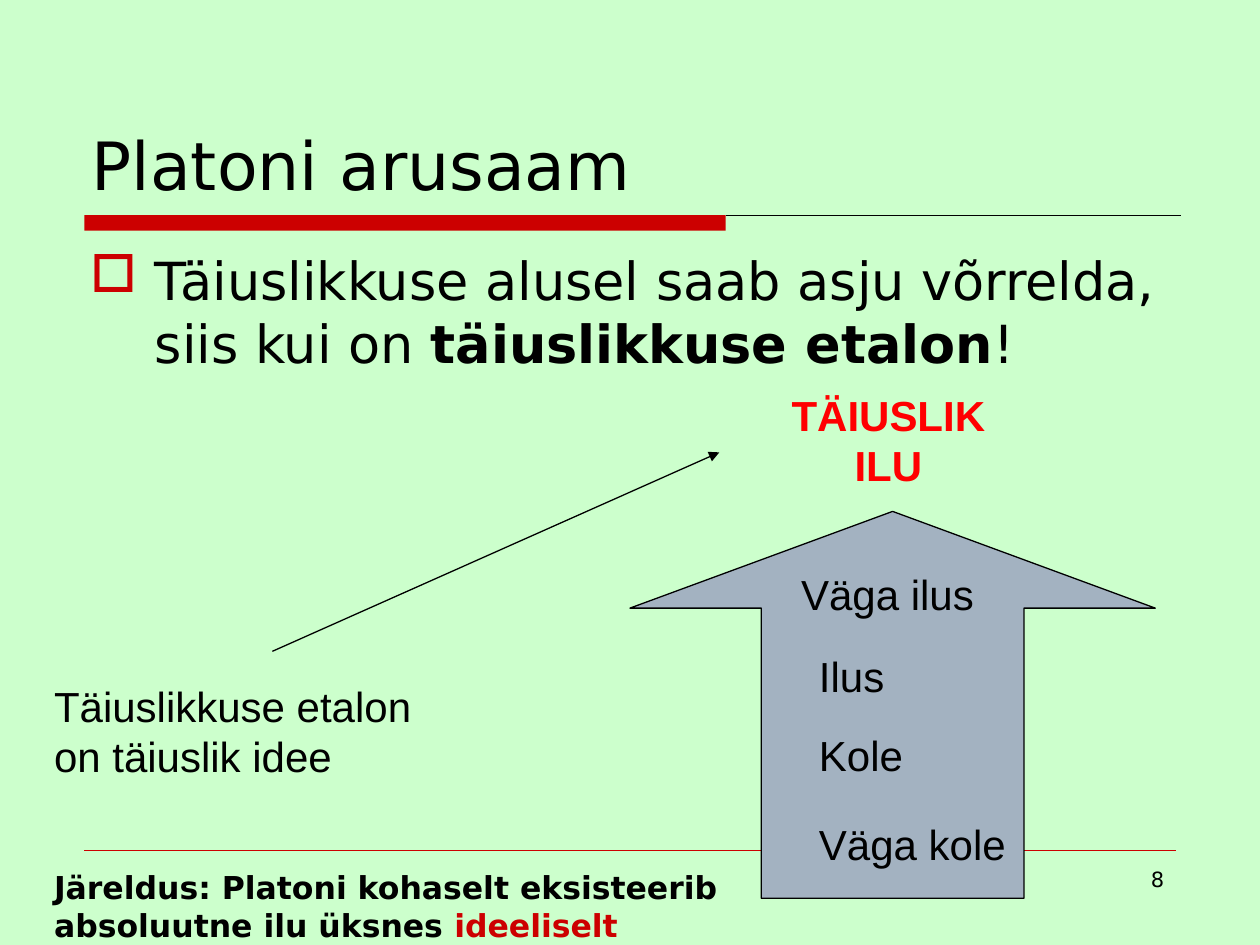
import pptx
import pptx.dml.color
import pptx.enum.shapes
import pptx.enum.text
import pptx.oxml
import pptx.oxml.ns
import pptx.util
from pptx.util import Cm, Pt

BLACK, RED, BRIGHT_RED = "000000", "CC0000", "FF0000"
BACKGROUND, ARROW_FILL = "CCFFCC", "A3B2C1"
SANS, ARIAL = "DejaVu Sans", "Arial"
ALIGN = pptx.enum.text.PP_ALIGN
ANCHOR = pptx.enum.text.MSO_ANCHOR
SHAPE = pptx.enum.shapes.MSO_SHAPE

# Each paragraph is a list of runs: (text, overrides)
TITLE = [[("Platoni arusaam", {})]]
BODY = [[
    ("Täiuslikkuse alusel saab asju võrrelda, siis kui on ", {}),
    ("täiuslikkuse etalon", {"bold": True}),
    ("!", {}),
]]
IDEAL = [[("TÄIUSLIK", {})], [("ILU", {})]]
STANDARD = [[("Täiuslikkuse etalon", {})], [("on täiuslik idee", {})]]
CONCLUSION = [
    [("Järeldus: Platoni kohaselt eksisteerib", {})],
    [("absoluutne ilu üksnes ", {}), ("ideeliselt", {"color": RED})],
]
PAGE_NUMBER = [[("8", {})]]

# Steps of beauty inside the arrow: text, left, top, width
STEPS = [
    ("Väga ilus", 15.9, 11.33, 3.99),
    ("Ilus", 16.26, 12.98, 1.83),
    ("Kole", 16.26, 14.58, 2.21),
    ("Väga kole", 16.26, 16.38, 4.29),
]


def rgb(color):
    return pptx.dml.color.RGBColor.from_string(color)


def add_xml(parent, xml):
    """Append an element of the drawing namespace to parent."""
    namespace = pptx.oxml.ns.nsdecls("a")
    parent.append(pptx.oxml.parse_xml(xml.replace("/>", f" {namespace}/>", 1)))


def add_text(slide, box, paragraphs, size, font=ARIAL, color=BLACK, bold=False,
             align=ALIGN.LEFT, anchor=ANCHOR.TOP, wrap=False):
    shape = slide.shapes.add_textbox(*map(Cm, box))
    frame = shape.text_frame
    frame.word_wrap = wrap
    frame.vertical_anchor = anchor
    for index, runs in enumerate(paragraphs):
        paragraph = frame.paragraphs[0] if index == 0 else frame.add_paragraph()
        paragraph.alignment = align
        paragraph.font.name = font
        paragraph.font.size = Pt(size)
        paragraph.font.bold = bold
        paragraph.font.color.rgb = rgb(color)
        for text, overrides in runs:
            run = paragraph.add_run()
            run.text = text
            if "bold" in overrides:
                run.font.bold = overrides["bold"]
            if "color" in overrides:
                run.font.color.rgb = rgb(overrides["color"])
    return shape


def add_line(slide, start, end, color, width):
    line = slide.shapes.add_connector(
        pptx.enum.shapes.MSO_CONNECTOR.STRAIGHT, *map(Cm, start + end))
    line.line.color.rgb = rgb(color)
    line.line.width = Pt(width)
    add_xml(line.element.spPr, "<a:effectLst/>")
    return line


def add_filled_shape(slide, kind, box, fill):
    shape = slide.shapes.add_shape(kind, *map(Cm, box))
    shape.shadow.inherit = False
    shape.fill.solid()
    shape.fill.fore_color.rgb = rgb(fill)
    return shape


def add_square_bullet(paragraph, indent):
    properties = paragraph._p.get_or_add_pPr()
    properties.set("marL", str(Cm(indent)))
    properties.set("indent", str(-Cm(indent)))
    paragraph.space_before = Pt(6)
    properties.append(pptx.oxml.parse_xml(
        f'<a:buClr {pptx.oxml.ns.nsdecls("a")}><a:srgbClr val="{RED}"/></a:buClr>'))
    add_xml(properties, '<a:buChar char="□"/>')
    # Bullet elements must come before the default run properties
    defaults = properties.find(pptx.oxml.ns.qn("a:defRPr"))
    if defaults is not None:
        properties.append(defaults)


def main():
    presentation = pptx.Presentation()
    presentation.slide_width, presentation.slide_height = Cm(25.4), Cm(19.05)
    slide = presentation.slides.add_slide(presentation.slide_layouts[6])
    slide.background.fill.solid()
    slide.background.fill.fore_color.rgb = rgb(BACKGROUND)

    title_bar = add_filled_shape(slide, SHAPE.RECTANGLE, (1.7, 4.34, 12.93, 0.31), RED)
    title_bar.line.fill.background()
    add_line(slide, (14.63, 4.34), (23.8, 4.34), BLACK, 0.75)
    add_line(slide, (1.7, 17.15), (23.7, 17.15), RED, 0.25)
    add_text(slide, (18.21, 17.35, 5.51, 1.32), PAGE_NUMBER, 12, SANS,
             align=ALIGN.RIGHT, wrap=True)

    add_text(slide, (1.6, 0.84, 22.23, 3.39), TITLE, 38, SANS,
             anchor=ANCHOR.BOTTOM, wrap=True)
    body = add_text(slide, (1.57, 4.88, 22.23, 11.86), BODY, 30, SANS, wrap=True)
    add_square_bullet(body.text_frame.paragraphs[0], 1.3)

    arrow = add_filled_shape(slide, SHAPE.UP_ARROW, (12.7, 10.31, 10.59, 7.8), ARROW_FILL)
    arrow.adjustments[0], arrow.adjustments[1] = 0.5, 0.25
    arrow.line.color.rgb = rgb(BLACK)
    arrow.line.width = Pt(0.75)

    add_text(slide, (15.7, 7.72, 4.42, 2.29), IDEAL, 24, color=BRIGHT_RED,
             bold=True, align=ALIGN.CENTER)
    for text, left, top, width in STEPS:
        add_text(slide, (left, top, width, 1.27), [[(text, {})]], 24)

    add_text(slide, (0.84, 13.59, 7.72, 2.29), STANDARD, 24)
    pointer = add_line(slide, (5.49, 13.13), (14.5, 9.12), BLACK, 0.75)
    add_xml(pointer.line._get_or_add_ln(), '<a:tailEnd type="triangle"/>')
    add_text(slide, (0.84, 17.37, 13.92, 1.78), CONCLUSION, 18, SANS, bold=True)

    presentation.save("out.pptx")


if __name__ == "__main__":
    main()
